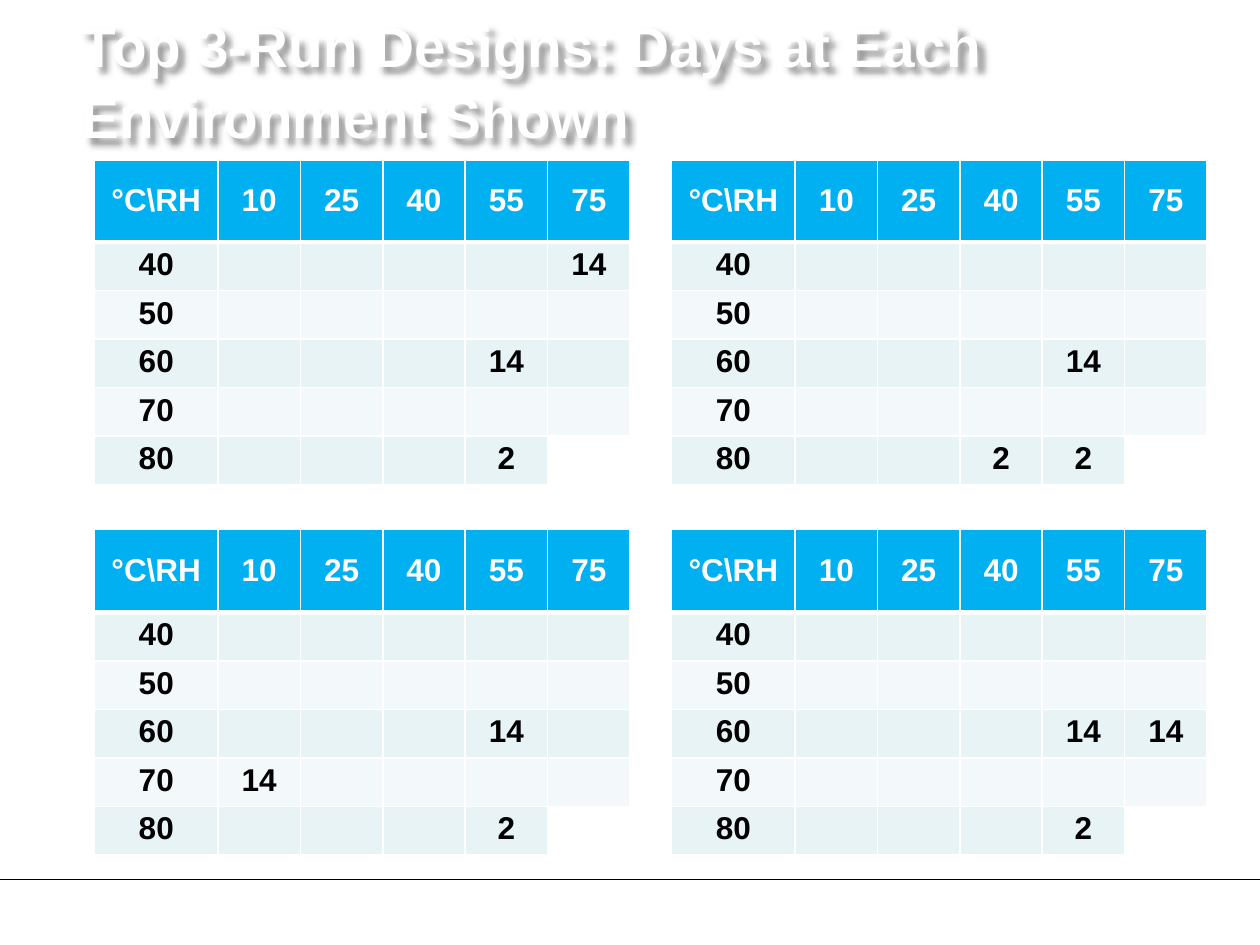
from lxml import etree
from pptx import Presentation
from pptx.dml.color import RGBColor as RGB
from pptx.enum.shapes import MSO_CONNECTOR as Link
from pptx.enum.text import MSO_ANCHOR as Anchor, MSO_AUTO_SIZE as Fit, PP_ALIGN as Align
from pptx.oxml import parse_xml
from pptx.oxml.ns import nsdecls, qn
from pptx.util import Inches, Pt

WHITE, BLACK, BLUE = "FFFFFF", "000000", "00B0F0"
BANDS = ["E7F3F4", "F3F9FA"]
HEAD = ["°C\\RH", "10", "25", "40", "55", "75"]
TEMPS = ["40", "50", "60", "70", "80"]
WIDE, FIRST, ROW = 4.25, 0.98, 0.38

# Left, top, head height and the days by (temperature, humidity)
GRIDS = [
    (5.33, 1.27, 0.65, {("60", "55"): "14", ("80", "40"): "2", ("80", "55"): "2"}),
    (5.33, 4.2, 0.66, {("60", "55"): "14", ("60", "75"): "14", ("80", "55"): "2"}),
    (0.75, 1.27, 0.65, {("40", "75"): "14", ("60", "55"): "14", ("80", "55"): "2"}),
    (0.75, 4.2, 0.66, {("60", "55"): "14", ("70", "10"): "14", ("80", "55"): "2"}),
]


def tint(text):
    return RGB.from_string(text)


def style(para, size, color):
    for run in para.runs:
        font = run.font
        font.name, font.size, font.bold = "Arial", Pt(size), True
        font.color.rgb = tint(color)


def add_title(slide, text):
    title = slide.shapes.title
    title.left, title.top = Inches(0.55), Inches(0)
    title.width, title.height = Inches(9), Inches(1.25)
    frame = title.text_frame
    frame.text = text
    frame.word_wrap = True
    frame.auto_size = Fit.NONE
    frame.vertical_anchor = Anchor.MIDDLE
    para = frame.paragraphs[0]
    para.alignment = Align.LEFT
    para.line_spacing = 1.05
    style(para, 32.4, WHITE)
    # Soft shadow that makes the white title readable
    title._element.spPr.append(parse_xml(
        f'<a:effectLst {nsdecls("a")}><a:outerShdw blurRad="50800" dist="50800" '
        'dir="2700000" algn="tl" rotWithShape="0"><a:srgbClr val="000000">'
        '<a:alpha val="40000"/></a:srgbClr></a:outerShdw></a:effectLst>'))


def add_rule(slide, top):
    rule = slide.shapes.add_connector(
        Link.STRAIGHT, Inches(0), Inches(top), Inches(10), Inches(top))
    rule.line.color.rgb = tint(BLACK)
    rule.line.width = Pt(0.5)
    etree.SubElement(rule._element.spPr, qn("a:effectLst"))


def set_edges(cell, top, bottom):
    props = cell._tc.get_or_add_tcPr()
    for side, width in (("L", 1), ("R", 1), ("T", top), ("B", bottom)):
        props.append(parse_xml(
            f'<a:ln{side} {nsdecls("a")} w="{Pt(width)}"><a:solidFill>'
            f'<a:srgbClr val="{WHITE}"/></a:solidFill></a:ln{side}>'))


def fill_cell(cell, text, row, fill):
    set_edges(cell, 3 if row == 1 else 1, 3 if row == 0 else 1)
    cell.fill.solid()
    cell.fill.fore_color.rgb = tint(fill)
    cell.margin_top = cell.margin_bottom = Inches(0.04)
    cell.vertical_anchor = Anchor.TOP if row else Anchor.MIDDLE
    cell.text_frame.text = text
    para = cell.text_frame.paragraphs[0]
    para.alignment = Align.CENTER
    style(para, 18, BLACK if row else WHITE)


def add_grid(slide, left, top, head, days):
    rows = [HEAD] + [[t] + [days.get((t, h), "") for h in HEAD[1:]] for t in TEMPS]
    high = head + ROW * len(TEMPS)
    table = slide.shapes.add_table(
        len(rows), len(HEAD), Inches(left), Inches(top), Inches(WIDE), Inches(high)).table
    for c, col in enumerate(table.columns):
        col.width = Inches((WIDE - FIRST) / (len(HEAD) - 1) if c else FIRST)
    for r, texts in enumerate(rows):
        table.rows[r].height = Inches(ROW if r else head)
        for c, text in enumerate(texts):
            fill = BANDS[(r - 1) % 2] if r else BLUE
            # The hottest, dampest corner is left out of the design
            if r == len(TEMPS) and c == len(HEAD) - 1:
                fill = WHITE
            fill_cell(table.cell(r, c), text, r, fill)


def main():
    deck = Presentation()
    deck.slide_width, deck.slide_height = Inches(10), Inches(7.5)
    slide = deck.slides.add_slide(deck.slide_layouts[5])
    add_rule(slide, 6.98)
    add_title(slide, "Top 3-Run Designs: Days at Each Environment Shown")
    for grid in GRIDS:
        add_grid(slide, *grid)
    deck.save("out.pptx")


if __name__ == "__main__":
    main()
